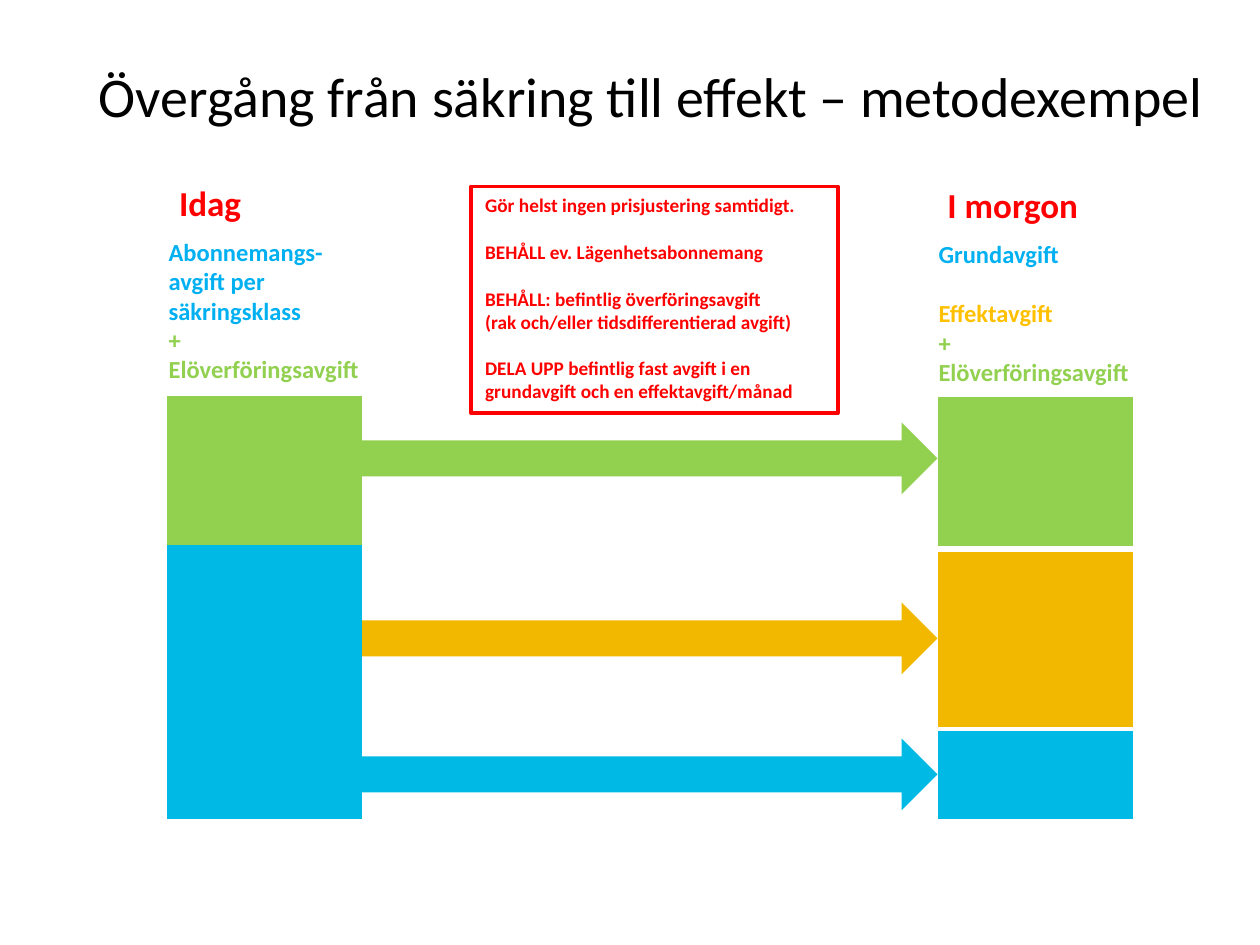
from pptx import Presentation
from pptx.dml.color import RGBColor
from pptx.enum.shapes import MSO_SHAPE
from pptx.enum.text import MSO_ANCHOR, MSO_AUTO_SIZE, PP_ALIGN
from pptx.util import Cm, Pt

COLORS = {
    "black": "000000",
    "red": "FF0000",
    "sky": "00B0F0",
    "blue": "00B9E4",
    "green": "92D050",
    "amber": "FFC000",
    "yellow": "F2B800",
}


class SlideBuilder:
    font_name = "Calibri"

    def __init__(self, slide):
        self.slide = slide

    def color(self, name):
        return RGBColor.from_string(COLORS[name])

    def format_font(self, paragraph, size, color, bold=True):
        font = paragraph.font
        font.name = self.font_name
        font.size = Pt(size)
        font.bold = bold
        font.color.rgb = self.color(color)

    def title(self, text, left, top, width, height):
        heading = self.slide.shapes.title
        heading.left, heading.top = Cm(left), Cm(top)
        heading.width, heading.height = Cm(width), Cm(height)
        frame = heading.text_frame
        frame.text = text
        frame.vertical_anchor = MSO_ANCHOR.MIDDLE
        frame.auto_size = MSO_AUTO_SIZE.NONE
        paragraph = frame.paragraphs[0]
        paragraph.alignment = PP_ALIGN.CENTER
        self.format_font(paragraph, 32, "black", bold=False)

    def text(self, lines, size, left, top, width, height, wrap=True):
        box = self.slide.shapes.add_textbox(Cm(left), Cm(top), Cm(width), Cm(height))
        frame = box.text_frame
        frame.word_wrap = wrap
        frame.auto_size = MSO_AUTO_SIZE.SHAPE_TO_FIT_TEXT
        for index, (line, color, gap) in enumerate(lines):
            paragraph = frame.paragraphs[0] if index == 0 else frame.add_paragraph()
            paragraph.text = line
            paragraph.space_before = Pt(gap)
            self.format_font(paragraph, size, color)

    def block(self, kind, left, top, width, height, fill=None, line=None):
        block = self.slide.shapes.add_shape(kind, Cm(left), Cm(top), Cm(width), Cm(height))
        block.shadow.inherit = False
        if fill:
            block.fill.solid()
            block.fill.fore_color.rgb = self.color(fill)
        else:
            block.fill.background()
        if line:
            block.line.color.rgb = self.color(line)
            block.line.width = Pt(2)
        else:
            block.line.fill.background()

    def fee(self, left, top, height, fill):
        self.block(MSO_SHAPE.FLOWCHART_PROCESS, left, top, 3.94, height, fill)

    def arrow(self, left, right, center, fill):
        height = 1.45
        self.block(MSO_SHAPE.RIGHT_ARROW, left, center - height / 2, right - left, height, fill)


def main():
    deck = Presentation()
    deck.slide_width, deck.slide_height = Cm(25.4), Cm(19.05)
    builder = SlideBuilder(deck.slides.add_slide(deck.slide_layouts[5]))
    today, tomorrow = 3.36, 18.9

    builder.title("Övergång från säkring till effekt – metodexempel", 1.63, 1.17, 22.99, 1.5)

    builder.text([("Idag", "red", 0)], 20, 3.36, 3.53, 1.78, 1.12, wrap=False)
    builder.text([("I morgon", "red", 0)], 20, 18.85, 3.58, 3.18, 1.12, wrap=False)

    transfer_fee = ("+ Elöverföringsavgift", "green", 0)
    builder.text(
        [("Abonnemangs- avgift per säkringsklass", "sky", 0), transfer_fee],
        14, 3.15, 4.65, 4.42, 3.25,
    )
    builder.text(
        [("Grundavgift", "sky", 0), ("Effektavgift", "amber", 17), transfer_fee],
        14, 18.67, 4.7, 4.55, 3.25,
    )

    advice = [
        ("Gör helst ingen prisjustering samtidigt.", 0),
        ("BEHÅLL ev. Lägenhetsabonnemang", 13.4),
        ("BEHÅLL: befintlig överföringsavgift", 13.4),
        ("(rak och/eller tidsdifferentierad avgift)", 0),
        ("DELA UPP befintlig fast avgift i en grundavgift och en effektavgift/månad", 13.4),
    ]
    builder.block(MSO_SHAPE.RECTANGLE, 9.5, 3.76, 7.39, 4.57, line="red")
    builder.text([(line, "red", gap) for line, gap in advice], 11, 9.53, 3.78, 7.57, 4.5)

    for top, height, fill in [(10.92, 5.59, "blue"), (7.98, 3, "green")]:
        builder.fee(today, top, height, fill)

    for top, height, center, fill in [
        (8, 3, 9.24, "green"),
        (11.13, 3.53, 12.87, "yellow"),
        (14.73, 1.78, 15.61, "blue"),
    ]:
        builder.fee(tomorrow, top, height, fill)
        builder.arrow(7.3, tomorrow, center, fill)

    deck.save("out.pptx")


if __name__ == "__main__":
    main()
